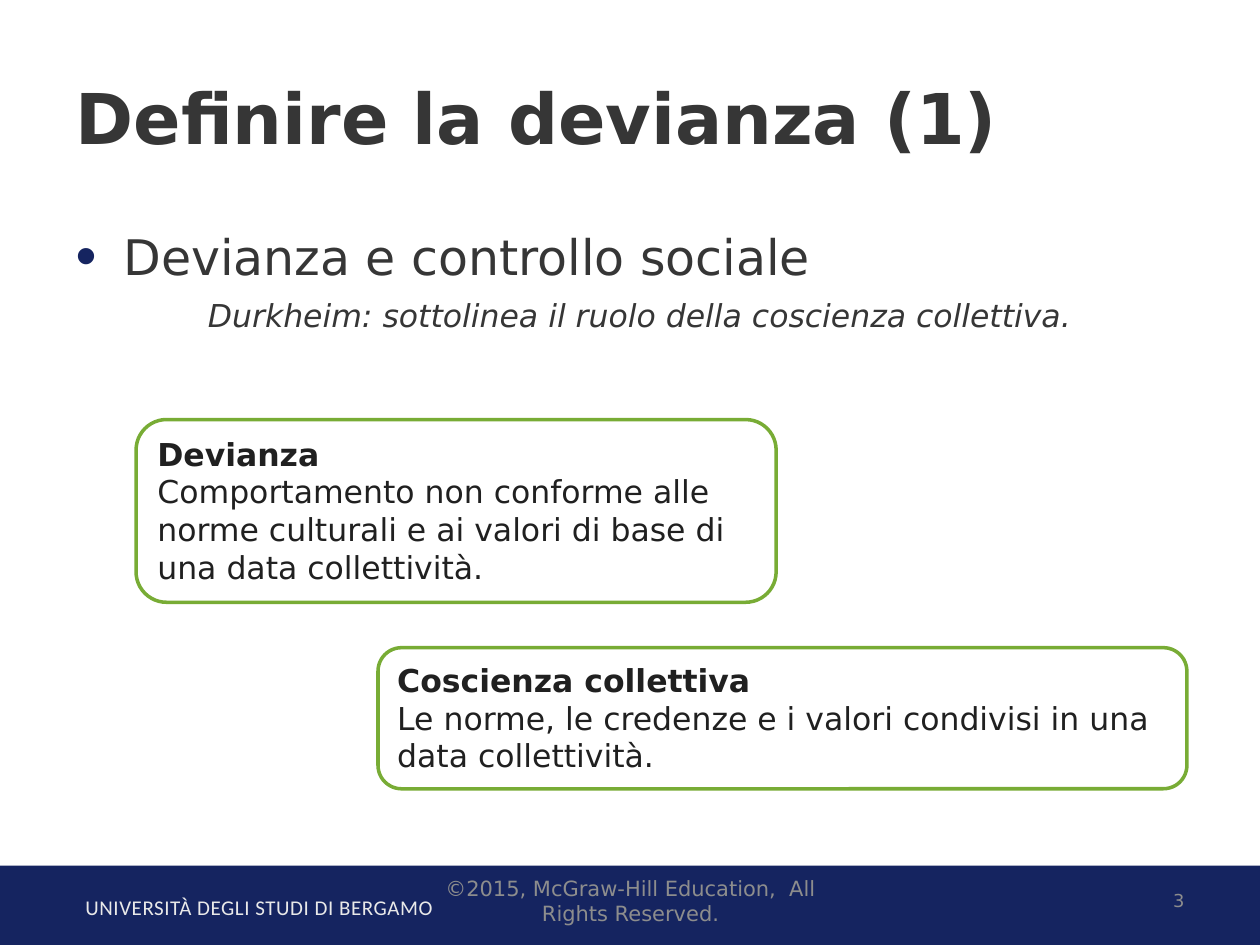
from dataclasses import dataclass

from lxml import etree
from pptx import Presentation, util as u
from pptx.dml.color import RGBColor
from pptx.enum import shapes, text
from pptx.oxml.ns import qn

SANS = "DejaVu Sans"
NAVY, GREEN, WHITE = "152460", "78AC35", "FFFFFF"
DARK, INK, GREY, PALE = "363636", "202020", "8D8D8D", "E9E9E9"
ALIGN = text.PP_ALIGN
MID, TOP = text.MSO_ANCHOR.MIDDLE, text.MSO_ANCHOR.TOP


@dataclass
class Area:
    left: float
    top: float
    width: float
    height: float

    def lengths(self) -> list:
        return [u.Inches(v) for v in (self.left, self.top, self.width, self.height)]


@dataclass
class Card:
    area: Area
    term: str
    meaning: str


@dataclass
class Label:
    area: Area
    words: str
    size: float
    color: str = GREY
    align: ALIGN = ALIGN.LEFT
    anchor: text.MSO_ANCHOR = MID
    face: str = SANS


def rgb(code: str) -> RGBColor:
    return RGBColor.from_string(code)


def style(para, size: float, color: str, bold=False, italic=False, face=SANS) -> None:
    font = para.font
    font.name, font.size = face, u.Pt(size)
    font.bold, font.italic = bold, italic
    font.color.rgb = rgb(color)


def place(holder, area: Area) -> None:
    holder.left, holder.top, holder.width, holder.height = area.lengths()
    holder.text_frame.auto_size = text.MSO_AUTO_SIZE.NONE


def indent(para, left: float, first: float) -> None:
    props = para._p.get_or_add_pPr()
    props.set("marL", str(u.Inches(left)))
    props.set("indent", str(u.Inches(first)))


def bullet(para, char: str, color: str, percent: int) -> None:
    props = para._p.get_or_add_pPr()
    tint = etree.SubElement(props, qn("a:buClr"))
    etree.SubElement(tint, qn("a:srgbClr"), val=color)
    etree.SubElement(props, qn("a:buSzPct"), val=str(percent * 1000))
    etree.SubElement(props, qn("a:buChar"), char=char)


def draw_shape(slide, kind, area: Area, fill: str):
    shape = slide.shapes.add_shape(kind, *area.lengths())
    shape.shadow.inherit = False
    shape.fill.solid()
    shape.fill.fore_color.rgb = rgb(fill)
    return shape


def draw_card(slide, card: Card) -> None:
    shape = draw_shape(slide, shapes.MSO_SHAPE.ROUNDED_RECTANGLE, card.area, WHITE)
    shape.line.color.rgb = rgb(GREEN)
    shape.line.width = u.Pt(2)
    frame = shape.text_frame
    frame.word_wrap = True
    frame.vertical_anchor = TOP
    frame.text = f"{card.term}\n{card.meaning}"
    for para, bold in zip(frame.paragraphs, (True, False)):
        para.alignment = ALIGN.LEFT
        style(para, 18, INK, bold=bold)


def draw_label(slide, label: Label):
    frame = slide.shapes.add_textbox(*label.area.lengths()).text_frame
    frame.word_wrap = True
    frame.vertical_anchor = label.anchor
    frame.text = label.words
    para = frame.paragraphs[0]
    para.alignment = label.align
    style(para, label.size, label.color, face=label.face)
    return para


CARDS = [
    Card(Area(1.08, 3.33, 5.08, 1.45), "Devianza",
         "Comportamento non conforme alle norme culturali e ai valori "
         "di base di una data collettività."),
    Card(Area(3, 5.14, 6.42, 1.12), "Coscienza collettiva",
         "Le norme, le credenze e i valori condivisi in una data collettività."),
]
SCHOOL = Label(Area(0.58, 7.05, 5.82, 0.3), "UNIVERSITÀ DEGLI STUDI DI BERGAMO",
               12, PALE, anchor=TOP, face="Calibri")
NUMBER = Label(Area(7.17, 6.95, 2.33, 0.4), "3", 10.2, align=ALIGN.RIGHT)
RIGHTS = Label(Area(3.42, 6.95, 3.17, 0.4),
               "©2015, McGraw-Hill Education,  All Rights Reserved.",
               12, align=ALIGN.CENTER)


def main() -> None:
    deck = Presentation()
    deck.slide_width, deck.slide_height = u.Inches(10), u.Inches(7.5)
    slide = deck.slides.add_slide(deck.slide_layouts[1])

    # Title
    title = slide.shapes.title
    place(title, Area(0.5, 0.3, 9, 1.25))
    title.text_frame.text = "Definire la devianza (1)"
    title.text_frame.vertical_anchor = MID
    head = title.text_frame.paragraphs[0]
    head.alignment = ALIGN.LEFT
    style(head, 40, DARK, bold=True)

    # Topic and its comment
    body = slide.placeholders[1]
    place(body, Area(0.5, 1.75, 9, 4.95))
    body.text_frame.text = ("Devianza e controllo sociale\n"
                            "Durkheim: sottolinea il ruolo della coscienza collettiva.")
    topic, note = body.text_frame.paragraphs
    indent(topic, 0.38, -0.38)
    bullet(topic, "•", NAVY, 122)
    topic.space_before = u.Pt(0)
    style(topic, 28, DARK)

    note.level = 2
    indent(note, 1.05, 0)
    etree.SubElement(note._p.get_or_add_pPr(), qn("a:buNone"))
    note.alignment = ALIGN.JUSTIFY
    note.space_before = note.space_after = u.Pt(6)
    style(note, 18, DARK, italic=True)

    # Footer band
    band = draw_shape(slide, shapes.MSO_SHAPE.RECTANGLE, Area(0, 6.87, 10, 0.63), NAVY)
    band.line.fill.background()
    school = draw_label(slide, SCHOOL)
    school.runs[0]._r.get_or_add_rPr().set("spc", "30")  # slightly spaced letters
    draw_label(slide, NUMBER)

    # Definitions
    for card in CARDS:
        draw_card(slide, card)

    draw_label(slide, RIGHTS)
    deck.save("out.pptx")


if __name__ == "__main__":
    main()
